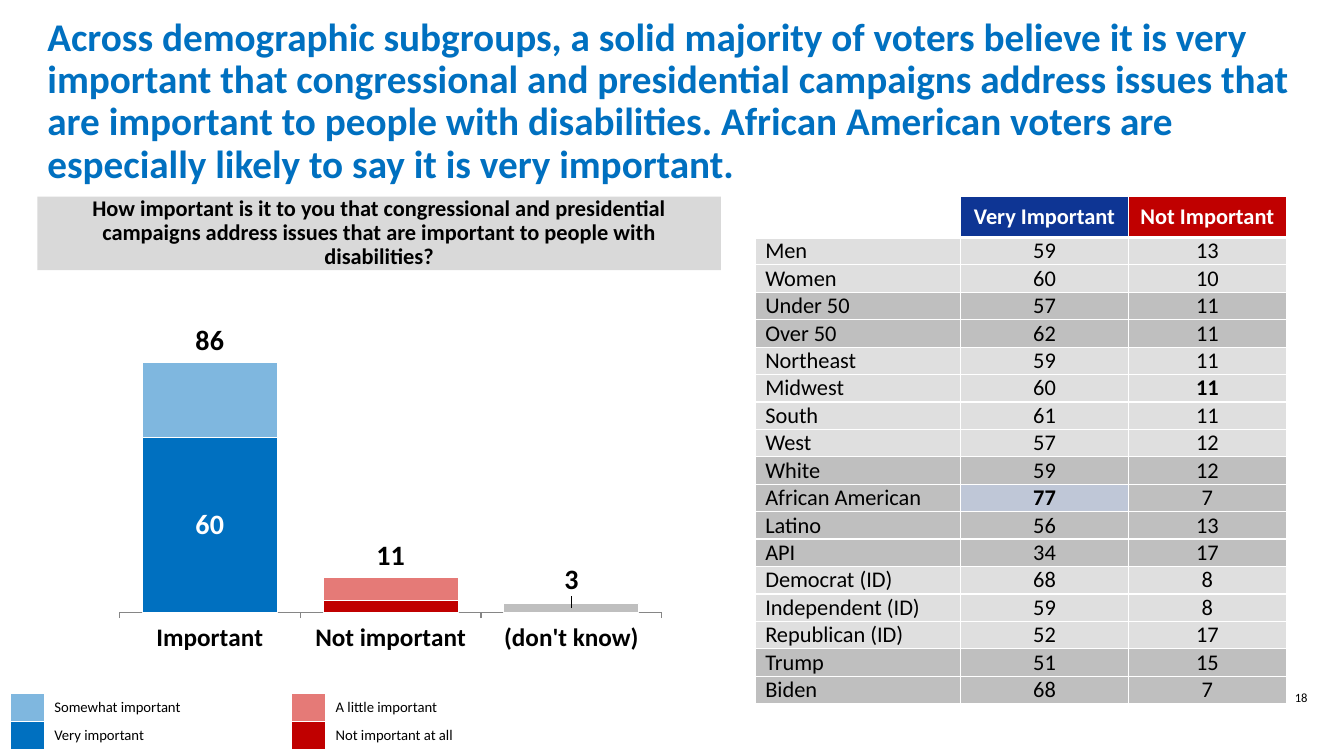
import pptx
import pptx.chart.data
import pptx.dml.color
import pptx.enum.chart
import pptx.enum.shapes
import pptx.enum.text
import pptx.oxml
import pptx.oxml.ns
import pptx.util
from pptx.util import Inches

FONT = "Calibri"
COLORS = {
    "black": "000000", "white": "FFFFFF", "blue": "0070C0", "navy": "0E3594",
    "red": "C00000", "pink": "E57A77", "gray": "808080", "light": "DFDFDF",
    "medium": "BFBFBF", "highlight": "BFC7D7", "banner": "D9D9D9", "axis": "868686",
}
CENTER = pptx.enum.text.PP_ALIGN.CENTER
LEFT = pptx.enum.text.PP_ALIGN.LEFT
MIDDLE = pptx.enum.text.MSO_ANCHOR.MIDDLE

TITLE = ("Across demographic subgroups, a solid majority of voters believe it is very important "
         "that congressional and presidential campaigns address issues that are important to "
         "people with disabilities. African American voters are especially likely to say it is "
         "very important.")
QUESTION = ("How important is it to you that congressional and presidential campaigns address "
            "issues that are important to people with disabilities?")

# Row groups: fill colour, opacity in percent, rows
GROUPS = [
    ("gray", 25, [("Men", 59, 13), ("Women", 60, 10)]),
    ("gray", 50, [("Under 50", 57, 11), ("Over 50", 62, 11)]),
    ("light", 100, [("Northeast", 59, 11), ("Midwest", 60, 11), ("South", 61, 11),
                    ("West", 57, 12)]),
    ("medium", 100, [("White", 59, 12), ("African American", 77, 7), ("Latino", 56, 13),
                     ("API", 34, 17)]),
    ("light", 100, [("Democrat (ID)", 68, 8), ("Independent (ID)", 59, 8),
                    ("Republican (ID)", 52, 17)]),
    ("medium", 100, [("Trump", 51, 15), ("Biden", 68, 7)]),
]
BOLD_CELLS = {("Midwest", 2), ("African American", 1)}
HIGHLIGHTED_CELL = ("African American", 1)


def rgb(name):
    return pptx.dml.color.RGBColor.from_string(COLORS[name])


def chart_xml(content):
    return pptx.oxml.parse_xml(content.replace(
        ">", f' {pptx.oxml.ns.nsdecls("c")}>', 1))


def paint(fill, owner, color, opacity=100):
    """Fill an object; owner is the XML element that holds the fill."""
    fill.solid()
    fill.fore_color.rgb = rgb(color)
    if opacity < 100:
        color_element = owner.xpath("./a:solidFill/a:srgbClr")[0]
        color_element.append(pptx.oxml.parse_xml(
            f'<a:alpha {pptx.oxml.ns.nsdecls("a")} val="{opacity * 1000}"/>'))


def set_font(font, size, color="black", bold=False):
    font.name = FONT
    font.size = pptx.util.Pt(size)
    font.bold = bold
    font.color.rgb = rgb(color)


def write(frame, text, size, color="black", bold=False, align=LEFT, spacing=None):
    frame.word_wrap = True
    frame.vertical_anchor = MIDDLE
    paragraph = frame.paragraphs[0]
    paragraph.text = text
    paragraph.alignment = align
    if spacing:
        paragraph.line_spacing = spacing
    set_font(paragraph.font, size, color, bold)


def add_plain_table(slide, left, top, widths, heights):
    shape = slide.shapes.add_table(len(heights), len(widths), Inches(left), Inches(top),
                                   Inches(sum(widths)), Inches(sum(heights)))
    table = shape.table
    table.horz_banding = False
    for column, width in zip(table.columns, widths):
        column.width = Inches(width)
    for row, height in zip(table.rows, heights):
        row.height = Inches(height)
    return table


def style_cell(cell, color=None, opacity=100, bottom=1):
    """White borders and an optional fill."""
    properties = cell._tc.get_or_add_tcPr()
    for side, points in (("L", 1), ("R", 1), ("T", 1), ("B", bottom)):
        properties.append(pptx.oxml.parse_xml(
            f'<a:ln{side} {pptx.oxml.ns.nsdecls("a")} w="{points * 12700}"><a:solidFill>'
            f'<a:srgbClr val="{COLORS["white"]}"/></a:solidFill></a:ln{side}>'))
    if color:
        paint(cell.fill, properties, color, opacity)
    else:
        cell.fill.background()


def add_subgroup_table(slide):
    rows = [(color, opacity, row) for color, opacity, group in GROUPS for row in group]
    table = add_plain_table(slide, 7.49, 1.95, [2.04, 1.66, 1.57], [0.4] + [0.27] * len(rows))
    headers = [("", "white"), ("Very Important", "navy"), ("Not Important", "red")]
    for index, (text, color) in enumerate(headers):
        cell = table.cell(0, index)
        style_cell(cell, color, bottom=3)
        if text:
            cell.vertical_anchor = MIDDLE
            write(cell.text_frame, text, 16, "white", True, CENTER)
    for row_index, (color, opacity, values) in enumerate(rows, 1):
        for index, value in enumerate(values):
            cell = table.cell(row_index, index)
            key = (values[0], index)
            if key == HIGHLIGHTED_CELL:
                style_cell(cell, "highlight")
            else:
                style_cell(cell, color, opacity)
            cell.margin_top = cell.margin_bottom = 0
            cell.vertical_anchor = MIDDLE
            write(cell.text_frame, str(value), 16, bold=key in BOLD_CELLS,
                  align=CENTER if index else LEFT)


def add_legend(slide):
    table = add_plain_table(slide, 0.1, 6.88, [0.34, 2.45, 0.34, 2.57], [0.27, 0.27])
    entries = [
        [("Somewhat important", "blue", 50), ("A little important", "pink", 100)],
        [("Very important", "blue", 100), ("Not important at all", "red", 100)],
    ]
    for row, pair in enumerate(entries):
        for index, (text, color, opacity) in enumerate(pair):
            swatch, label = table.cell(row, 2 * index), table.cell(row, 2 * index + 1)
            style_cell(swatch, color, opacity)
            set_font(swatch.text_frame.paragraphs[0].font, 10.5)
            style_cell(label)
            write(label.text_frame, text, 10.5)


def show_values(series, color, position):
    labels = series.data_labels
    labels.show_value = True
    labels.position = position
    set_font(labels.font, 20, color, True)


def add_importance_chart(slide):
    data = pptx.chart.data.CategoryChartData()
    data.categories = ["Important", "Not important", "(don't know)"]
    data.add_series("Series 1", [60, 4, 3])
    data.add_series("Series 2", [26, 8, None])
    data.add_series("Series 3", [86, 11, None])
    chart = slide.shapes.add_chart(
        pptx.enum.chart.XL_CHART_TYPE.COLUMN_STACKED,
        Inches(1.09), Inches(3.02), Inches(5.57), Inches(3.51), data).chart
    chart.has_legend = chart.has_title = False
    set_font(chart.font, 14)
    plot = chart.plots[0]
    plot.gap_width, plot.overlap, plot.vary_by_categories = 34, 100, False

    # Axes and plot area
    value_axis, category_axis = chart.value_axis, chart.category_axis
    value_axis.minimum_scale, value_axis.maximum_scale = 0, 100
    value_axis.has_major_gridlines = value_axis.visible = False
    category_axis.major_tick_mark = pptx.enum.chart.XL_TICK_MARK.OUTSIDE
    category_axis.format.line.color.rgb = rgb("axis")
    set_font(category_axis.tick_labels.font, 18, bold=True)
    plot_area = chart._chartSpace.xpath("c:chart/c:plotArea")[0]
    for layout in plot_area.xpath("c:layout"):
        plot_area.remove(layout)
    plot_area.insert(0, chart_xml(
        '<c:layout><c:manualLayout><c:layoutTarget val="inner"/>'
        '<c:xMode val="edge"/><c:yMode val="edge"/><c:x val="0.017"/><c:y val="0.048"/>'
        '<c:w val="0.966"/><c:h val="0.822"/></c:manualLayout></c:layout>'))

    # Bars
    strong, mild, totals = plot.series
    bars = [(strong, [("blue", 100), ("red", 100), ("medium", 100)]),
            (mild, [("blue", 50), ("pink", 100)]), (totals, [])]
    for series, fills in bars:
        series.format.line.color.rgb = rgb("white")
        series.format.line.width = pptx.util.Pt(0.75)
        for index, (color, opacity) in enumerate(fills):
            point_format = series.points[index].format
            point_format.line.color.rgb = rgb("white")
            point_format.line.width = pptx.util.Pt(0.75)
            owner = series._element.xpath(f'c:dPt[c:idx/@val="{index}"]/c:spPr')[0]
            paint(point_format.fill, owner, color, opacity)
    totals.format.fill.background()

    # Value labels: none on the second bar, raised above the third
    position = pptx.enum.chart.XL_LABEL_POSITION
    show_values(strong, "white", position.CENTER)
    show_values(totals, "black", position.INSIDE_BASE)
    set_font(strong.points[2].data_label.font, 20, "black", True)
    labels = strong._element.xpath("c:dLbls")[0]
    labels.xpath("c:dLbl/c:idx")[0].addnext(chart_xml(
        '<c:layout><c:manualLayout><c:x val="0"/><c:y val="-0.08"/>'
        '</c:manualLayout></c:layout>'))
    labels.insert(0, chart_xml('<c:dLbl><c:idx val="1"/><c:delete val="1"/></c:dLbl>'))


def add_question(slide):
    banner = slide.shapes.add_shape(pptx.enum.shapes.MSO_SHAPE.RECTANGLE, Inches(0.37),
                                    Inches(1.95), Inches(6.78), Inches(0.73))
    banner.shadow.inherit = False
    banner.fill.solid()
    banner.fill.fore_color.rgb = rgb("banner")
    banner.line.fill.background()
    write(banner.text_frame, QUESTION, 16, bold=True, align=CENTER, spacing=0.9)


def main():
    presentation = pptx.Presentation()
    presentation.slide_width, presentation.slide_height = Inches(13.33), Inches(7.5)
    slide = presentation.slides.add_slide(presentation.slide_layouts[5])

    title = slide.shapes.title
    title.left, title.top = Inches(0.37), Inches(0.29)
    title.width, title.height = Inches(12.6), Inches(1.44)
    write(title.text_frame, TITLE, 28, "blue", True, spacing=0.9)
    title.text_frame.auto_size = pptx.enum.text.MSO_AUTO_SIZE.NONE

    add_importance_chart(slide)
    add_legend(slide)
    add_subgroup_table(slide)
    add_question(slide)
    number = slide.shapes.add_textbox(Inches(12.53), Inches(6.75), Inches(0.75), Inches(0.33))
    write(number.text_frame, "18", 9, align=CENTER)
    presentation.save("out.pptx")


if __name__ == "__main__":
    main()
